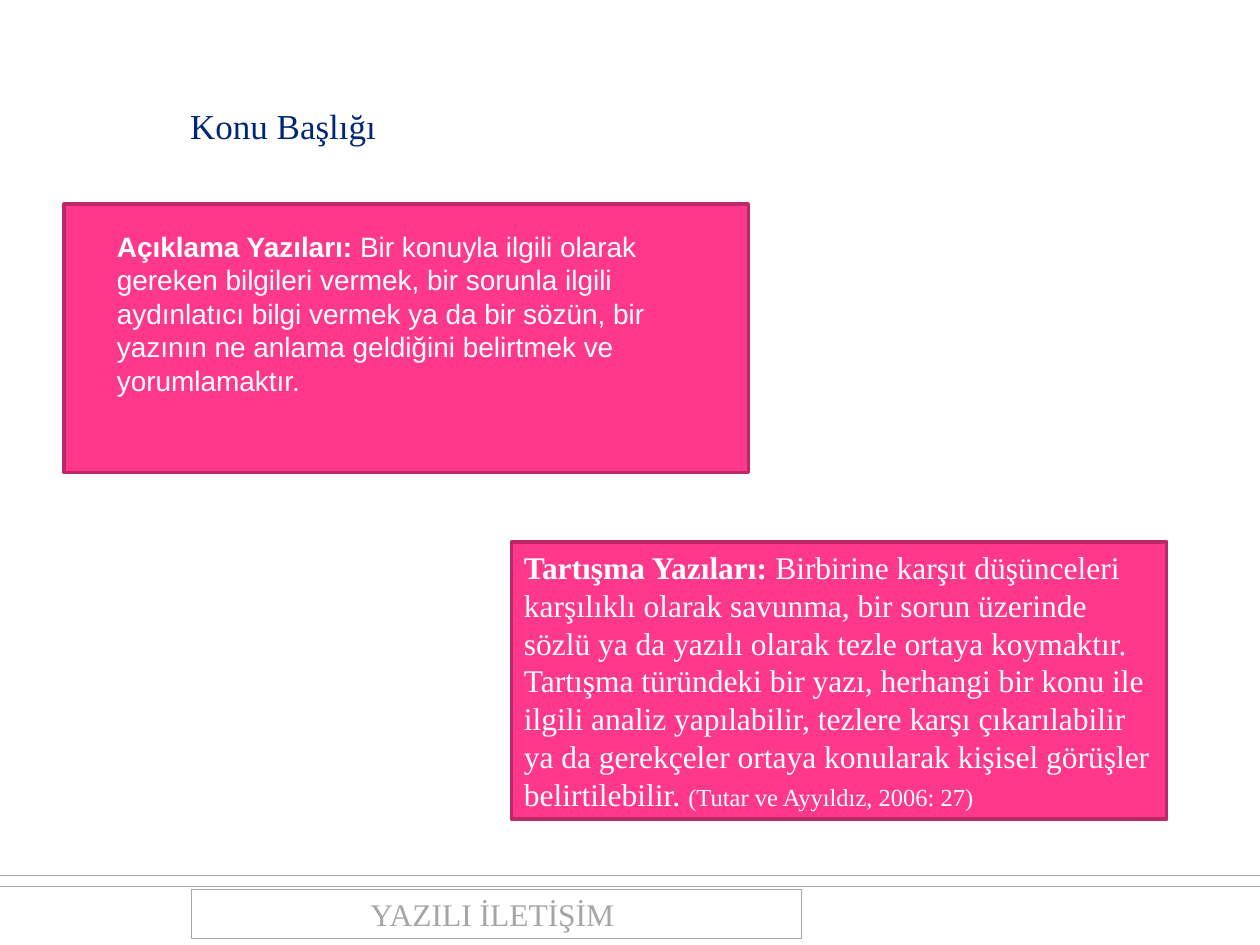
from dataclasses import dataclass
from typing import Optional

from lxml.etree import SubElement
from pptx import Presentation
from pptx.dml.color import RGBColor as Rgb
from pptx.enum.shapes import MSO_CONNECTOR as Conn, MSO_SHAPE as Kind
from pptx.enum.text import MSO_ANCHOR as Anchor, PP_ALIGN as Align
from pptx.oxml.ns import qn
from pptx.util import Inches, Pt


@dataclass(frozen=True)
class Theme:
    navy: Rgb = Rgb(0x00, 0x27, 0x76)
    pink: Rgb = Rgb(0xFF, 0x38, 0x8C)
    edge: Rgb = Rgb(0xBD, 0x29, 0x68)
    gray: Rgb = Rgb(0xA6, 0xA6, 0xA6)
    white: Rgb = Rgb(0xFF, 0xFF, 0xFF)
    serif: str = "Times New Roman"
    sans: str = "Arial"
    title: int = 20
    body: int = 18
    small: int = 16
    cite: int = 14
    thick: float = 2
    thin: float = 0.25


THEME = Theme()


@dataclass(frozen=True)
class Run:
    text: str
    size: int
    color: Rgb
    font: str = THEME.serif
    bold: bool = False


@dataclass(frozen=True)
class Box:
    area: tuple[float, float, float, float]
    runs: tuple[Run, ...] = ()
    fill: Optional[Rgb] = None
    line: Optional[Rgb] = None
    width: float = THEME.thick
    anchor: Anchor = Anchor.MIDDLE
    align: Align = Align.LEFT


def write(frame, box: Box) -> None:
    frame.word_wrap = True
    frame.vertical_anchor = box.anchor
    para = frame.paragraphs[0]
    para.alignment = box.align
    for item in box.runs:
        run = para.add_run()
        run.text = item.text
        look = {"name": item.font, "size": Pt(item.size), "bold": item.bold}
        for key, value in look.items():
            setattr(run.font, key, value)
        run.font.color.rgb = item.color


def draw_box(slide, box: Box) -> None:
    area = [Inches(n) for n in box.area]
    if box.line is None:
        shape = slide.shapes.add_textbox(*area)
    else:
        shape = slide.shapes.add_shape(Kind.RECTANGLE, *area)
        shape.shadow.inherit = False
        shape.line.color.rgb = box.line
        shape.line.width = Pt(box.width)
        if box.fill is None:
            shape.fill.background()
        else:
            shape.fill.solid()
            shape.fill.fore_color.rgb = box.fill
    if box.runs:
        write(shape.text_frame, box)


def draw_rule(slide, y: float) -> None:
    rule = slide.shapes.add_connector(
        Conn.STRAIGHT, Inches(0), Inches(y), Inches(10), Inches(y))
    rule.line.color.rgb = THEME.gray
    rule.line.width = Pt(THEME.thin)
    SubElement(rule._element.spPr, qn("a:effectLst"))


BOXES = (
    # Title
    Box((1.41, 0.78, 5.31, 0.44),
        (Run("Konu Başlığı", THEME.title, THEME.navy),), anchor=Anchor.TOP),
    # Explanatory writing: panel and its text
    Box((0.51, 1.62, 5.43, 2.13), fill=THEME.pink, line=THEME.edge),
    Box((0.83, 1.77, 4.96, 1.72), (
        Run("Açıklama Yazıları: ", THEME.small, THEME.white, THEME.sans, True),
        Run("Bir konuyla ilgili olarak gereken bilgileri vermek, bir sorunla "
            "ilgili aydınlatıcı bilgi vermek ya da bir sözün, bir yazının ne "
            "anlama geldiğini belirtmek ve yorumlamaktır.",
            THEME.small, THEME.white, THEME.sans),
    ), anchor=Anchor.TOP),
    # Discussion writing
    Box((4.06, 4.3, 5.2, 2.2), (
        Run("Tartışma Yazıları: ", THEME.body, THEME.white, bold=True),
        Run("Birbirine karşıt düşünceleri karşılıklı olarak savunma, bir sorun "
            "üzerinde sözlü ya da yazılı olarak tezle ortaya koymaktır. "
            "Tartışma türündeki bir yazı, herhangi bir konu ile ilgili analiz "
            "yapılabilir, tezlere karşı çıkarılabilir ya da gerekçeler ortaya "
            "konularak kişisel görüşler belirtilebilir. ",
            THEME.body, THEME.white),
        Run("(Tutar ve Ayyıldız, 2006: 27)", THEME.cite, THEME.white),
    ), THEME.pink, THEME.edge),
    # Footer
    Box((1.52, 7.06, 4.84, 0.39),
        (Run("YAZILI İLETİŞİM ", THEME.body, THEME.gray),),
        line=THEME.gray, width=THEME.thin, align=Align.CENTER),
)


def main() -> None:
    deck = Presentation()
    deck.slide_width, deck.slide_height = Inches(10), Inches(7.5)
    slide = deck.slides.add_slide(deck.slide_layouts[6])
    # Footer rules lie behind the boxes
    for y in (7.03, 6.95):
        draw_rule(slide, y)
    for box in BOXES:
        draw_box(slide, box)
    deck.save("out.pptx")


if __name__ == "__main__":
    main()
